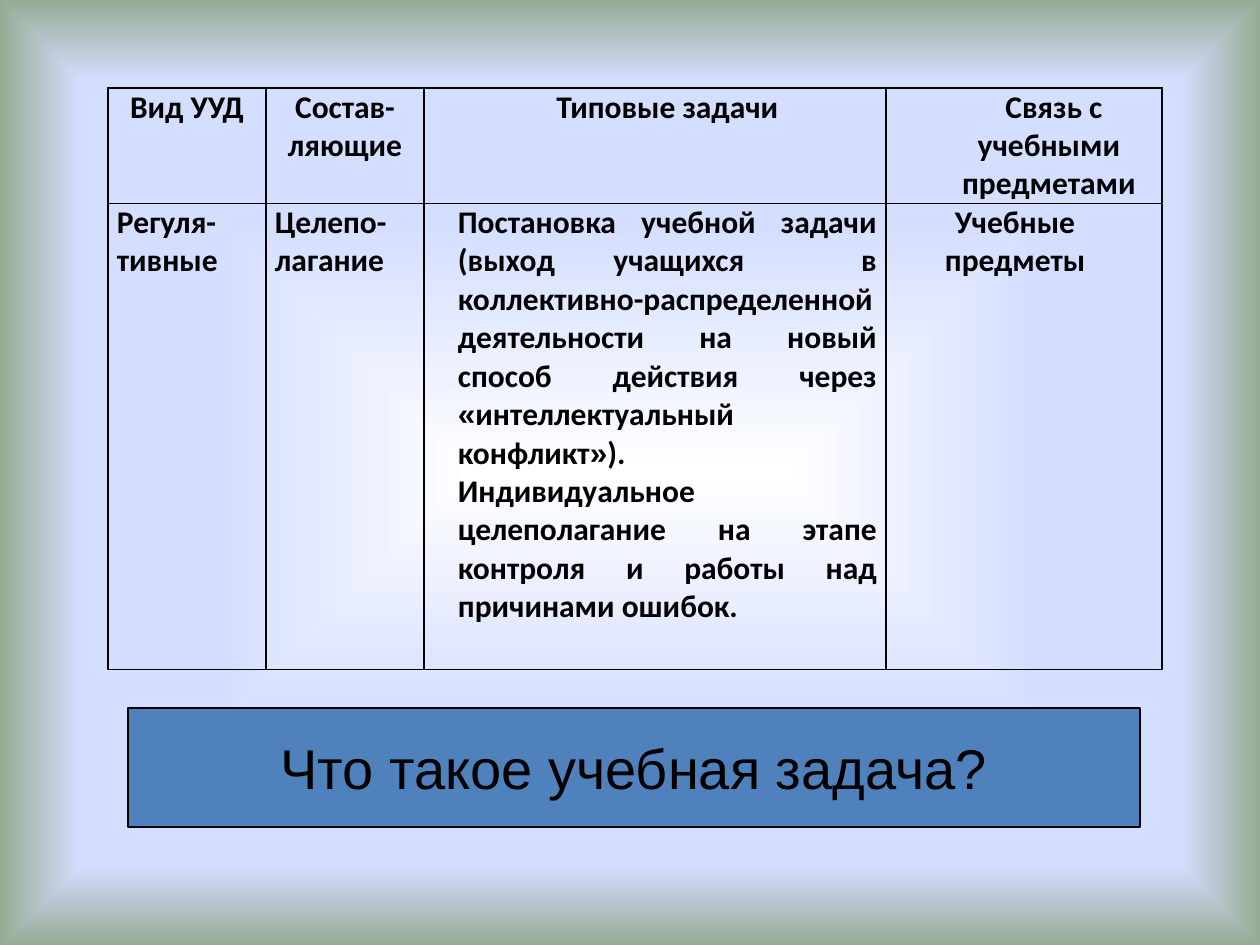
"""Build a slide with a table of learning skills and a question banner."""
import itertools

import pptx
import pptx.dml.color
import pptx.enum.shapes
import pptx.enum.text
import pptx.oxml
import pptx.oxml.ns
import pptx.util

ALIGN = pptx.enum.text.PP_ALIGN
MID = pptx.enum.text.MSO_ANCHOR.MIDDLE
RECT = pptx.enum.shapes.MSO_SHAPE.RECTANGLE
NS = pptx.oxml.ns.nsdecls("a")
STOPS = [(0, "FFFFFF"), (53, "D4DEFF"), (83, "D4DEFF"), (100, "96AB94")]
COLS = [158, 158, 462, 276]
ROWS = [113, 466]
INDENT = [(0, 0), (0, 0), (25, 0), (50, 10)]
CELLS = [
    [["Вид УУД"], ["Состав-ляющие"], ["Типовые задачи"],
     ["Связь с учебными предметами"]],
    [["Регуля-тивные "], ["Целепо-", "лагание"],
     ["Постановка учебной задачи (выход учащихся  в коллективно-распределенной "
      "деятельности на новый способ действия через «интеллектуальный конфликт»).",
      "Индивидуальное целеполагание на этапе контроля и работы над причинами ошибок."],
     ["Учебные предметы"]],
]


def px(num):
    return pptx.util.Emu(num * 914400 // 126)


def rgb(code):
    return pptx.dml.color.RGBColor.from_string(code)


def put(obj, vals):
    for name, val in vals.items():
        setattr(obj, name, val)


class Deck:
    def __init__(self, ink, bold, plain):
        self.ink, self.bold, self.plain = ink, bold, plain
        self.prs = pptx.Presentation()
        put(self.prs, {"slide_width": px(1260), "slide_height": px(945)})
        self.slide = self.prs.slides.add_slide(self.prs.slide_layouts[6])

    def back(self, stops):
        self.slide.background.fill.solid()
        prop = self.slide.background._cSld.bg.bgPr
        marks = "".join(
            f'<a:gs pos="{pos * 1000}"><a:srgbClr val="{code}"/></a:gs>'
            for pos, code in stops)
        prop.replace(prop[0], pptx.oxml.parse_xml(
            f'<a:gradFill {NS} rotWithShape="1"><a:gsLst>{marks}</a:gsLst>'
            '<a:path path="shape"><a:fillToRect l="50000" t="50000" '
            'r="50000" b="50000"/></a:path></a:gradFill>'))

    def text(self, frame, paras, align, indent, size, bold):
        for num, words in enumerate(paras):
            para = frame.add_paragraph() if num else frame.paragraphs[0]
            para.alignment = align
            prop = para._p.get_or_add_pPr()
            for name, val in zip(("marL", "indent"), indent):
                prop.set(name, str(px(val)))
            for quote, part in itertools.groupby(words, lambda c: c in "«»"):
                run = para.add_run()
                run.text = "".join(part)
                put(run.font, {
                    "name": self.bold if bold and not quote else self.plain,
                    "size": pptx.util.Pt(size), "bold": bold})
                run.font.color.rgb = rgb(self.ink)

    def frame(self, cell):
        for side in "LRTB":
            cell._tc.get_or_add_tcPr().append(pptx.oxml.parse_xml(
                f'<a:ln{side} {NS} w="12700"><a:solidFill>'
                f'<a:srgbClr val="{self.ink}"/></a:solidFill></a:ln{side}>'))
        cell.fill.background()

    def table(self, left, top, cols, rows, cells, indent):
        grid = self.slide.shapes.add_table(
            len(rows), len(cols), px(left), px(top),
            px(sum(cols)), px(sum(rows))).table
        put(grid, {"first_row": False, "horz_banding": False})
        for col, width in zip(grid.columns, cols):
            col.width = px(width)
        for row, high in zip(grid.rows, rows):
            row.height = px(high)
        for r, line in enumerate(cells):
            align = ALIGN.JUSTIFY if r else ALIGN.CENTER
            for c, paras in enumerate(line):
                cell = grid.cell(r, c)
                put(cell, {"margin_left": px(9), "margin_right": px(9),
                           "margin_top": 0, "margin_bottom": 0})
                self.frame(cell)
                self.text(cell.text_frame, paras, align, indent[c], 18, True)

    def banner(self, left, top, width, high, words, fill):
        box = self.slide.shapes.add_shape(
            RECT, px(left), px(top), px(width), px(high))
        box.shadow.inherit = False
        box.fill.solid()
        box.fill.fore_color.rgb = rgb(fill)
        box.line.color.rgb = rgb(self.ink)
        box.line.width = pptx.util.Pt(0.75)
        put(box.text_frame, {"word_wrap": False, "vertical_anchor": MID})
        self.text(box.text_frame, [words], ALIGN.CENTER, (48, -48), 32, False)
        box.text_frame.paragraphs[0].space_before = pptx.util.Pt(6)


def main():
    deck = Deck("000000", "Calibri", "Arial")
    deck.back(STOPS)
    deck.table(108, 88, COLS, ROWS, CELLS, INDENT)
    deck.banner(128, 708, 1012, 119, "Что такое учебная задача?", "4F81BD")
    deck.prs.save("out.pptx")


if __name__ == "__main__":
    main()
